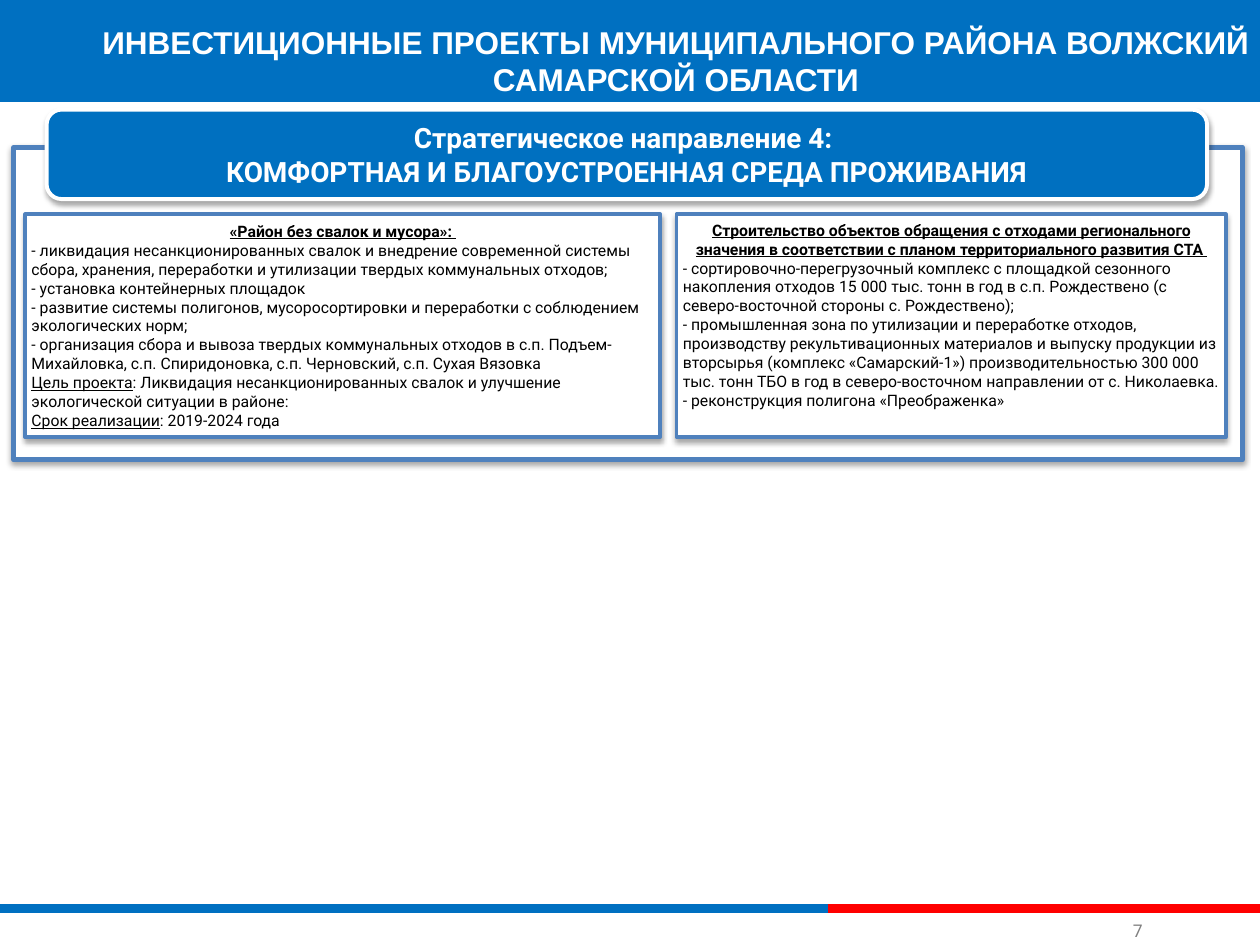
from dataclasses import dataclass

from lxml import etree
from pptx import Presentation
from pptx.dml.color import RGBColor
from pptx.enum.shapes import MSO_CONNECTOR, MSO_SHAPE
from pptx.enum.text import MSO_ANCHOR, MSO_AUTO_SIZE, PP_ALIGN
from pptx.oxml.ns import qn
from pptx.util import Inches, Pt

RECTANGLE, ROUNDED = MSO_SHAPE.RECTANGLE, MSO_SHAPE.ROUNDED_RECTANGLE
STRAIGHT = MSO_CONNECTOR.STRAIGHT
TOP, MIDDLE, BOTTOM = MSO_ANCHOR.TOP, MSO_ANCHOR.MIDDLE, MSO_ANCHOR.BOTTOM
LEFT, CENTER = PP_ALIGN.LEFT, PP_ALIGN.CENTER
FIXED = MSO_AUTO_SIZE.NONE
TITLE_ONLY = 5


@dataclass(frozen=True)
class Theme:
    """Colours, fonts and type sizes of the deck."""
    band: str = "0070C1"
    banner: str = "0070C0"
    border: str = "4F81BD"
    accent: str = "FF0000"
    white: str = "FFFFFF"
    black: str = "000000"
    grey: str = "808080"
    heading_font: str = "Arial"
    body_font: str = "Roboto"
    title_size: float = 18
    banner_size: float = 16
    number_size: float = 10
    body_size: float = 9


THEME = Theme()

TITLE = "ИНВЕСТИЦИОННЫЕ ПРОЕКТЫ МУНИЦИПАЛЬНОГО РАЙОНА ВОЛЖСКИЙ САМАРСКОЙ ОБЛАСТИ"
DIRECTION = ["Стратегическое направление 4: ", "КОМФОРТНАЯ И БЛАГОУСТРОЕННАЯ СРЕДА ПРОЖИВАНИЯ"]
CLEAN_HEADING = "«Район без свалок и мусора»: "
CLEAN_ITEMS = [
    ("", "- ликвидация несанкционированных свалок и внедрение современной системы сбора, хранения, "
         "переработки и утилизации твердых коммунальных отходов;"),
    ("", "- установка контейнерных площадок"),
    ("", "- развитие системы полигонов, мусоросортировки и переработки с соблюдением экологических норм;"),
    ("", "- организация сбора и вывоза твердых коммунальных отходов в с.п. Подъем-Михайловка, "
         "с.п. Спиридоновка, с.п. Черновский, с.п. Сухая Вязовка"),
    ("Цель проекта", ": Ликвидация несанкционированных свалок и улучшение экологической ситуации в районе:"),
    ("Срок реализации", ": 2019-2024 года"),
]
FACILITY_HEADING = ("Строительство объектов обращения с отходами регионального значения "
                    "в соответствии с планом территориального развития СТА ")
FACILITY_ITEMS = [
    ("", "- сортировочно-перегрузочный комплекс с площадкой сезонного накопления отходов "
         "15 000 тыс. тонн в год в с.п. Рождествено (с северо-восточной стороны с. Рождествено);"),
    ("", "- промышленная зона по утилизации и переработке отходов, производству рекультивационных "
         "материалов и выпуску продукции из вторсырья (комплекс «Самарский-1») производительностью "
         "300 000 тыс. тонн ТБО в год в северо-восточном направлении от с. Николаевка."),
    ("", "- реконструкция полигона «Преображенка»"),
]


def inches(box):
    """Turn a box given in inches into lengths."""
    return [Inches(value) for value in box]


def add_panel(page, box, kind, fill, border=None, weight=0):
    """Add a filled shape, with a soft shadow when it has a border."""
    panel = page.shapes.add_shape(kind, *inches(box))
    panel.fill.solid()
    panel.fill.fore_color.rgb = RGBColor.from_string(fill)
    if border is None:
        panel.line.fill.background()
    else:
        panel.line.color.rgb = RGBColor.from_string(border)
        panel.line.width = Pt(weight)
    panel.shadow.inherit = False
    if border is not None:
        effects = panel.element.spPr.find(qn("a:effectLst"))
        shadow = etree.SubElement(effects, qn("a:outerShdw"), blurRad=str(Pt(3)), dist=str(Pt(1.8)),
                                  dir="5400000", rotWithShape="0")
        color = etree.SubElement(shadow, qn("a:srgbClr"), val=THEME.black)
        etree.SubElement(color, qn("a:alpha"), val="35000")
    return panel


def prepare_frame(shape, anchor, wrap=True):
    """Set the margins, anchor and wrapping of a shape's text."""
    frame = shape.text_frame
    frame.auto_size = FIXED
    frame.word_wrap = wrap
    frame.vertical_anchor = anchor
    frame.margin_left = frame.margin_right = Inches(0.05)
    frame.margin_top = frame.margin_bottom = Inches(0.05)
    return frame


def style_frame(frame, align, size, color, font, bold=False):
    """Give every paragraph of a frame one look."""
    for para in frame.paragraphs:
        para.alignment = align
        for span in para.runs:
            style_span(span, size, color, font, bold)


def style_span(span, size, color, font, bold=False, underline=False):
    """Set the type of one run."""
    span.font.name = font
    span.font.size = Pt(size)
    span.font.bold = bold
    span.font.underline = underline
    span.font.color.rgb = RGBColor.from_string(color)


def add_header(page, box):
    """Place the blue band and the title over it."""
    left, top, width, height = box
    add_panel(page, box, RECTANGLE, THEME.band)
    title = page.shapes.title
    title.element.getparent().append(title.element)
    title.left, title.top, title.width, title.height = inches((left + 0.73, top + 0.16, width - 0.73, 0.71))
    frame = prepare_frame(title, TOP)
    frame.text = TITLE
    style_frame(frame, CENTER, THEME.title_size, THEME.white, THEME.heading_font, True)


def add_footer(page, box):
    """Draw the two-colour rule and the page number under it."""
    left, top, width, height = box
    split = left + 6.57
    for start, end, color in ((left, split, THEME.band), (split, left + width, THEME.accent)):
        rule = page.shapes.add_connector(STRAIGHT, *inches((start, top, end, top)))
        rule.line.color.rgb = RGBColor.from_string(color)
        rule.line.width = Pt(5)
        etree.SubElement(rule.element.spPr, qn("a:effectLst"))
    number = page.shapes.add_textbox(*inches((left + 8.94, top + 0.06, 0.19, height - 0.04)))
    frame = prepare_frame(number, BOTTOM, False)
    frame.text = "7"
    style_frame(frame, LEFT, THEME.number_size, THEME.grey, THEME.body_font)


def add_direction(page, box):
    """Place the outer frame with the banner across its top edge."""
    left, top, width, height = box
    add_panel(page, box, RECTANGLE, THEME.white, THEME.border, 3)
    banner = add_panel(page, (left + 0.26, top - 0.3, width - 0.54, 0.71), ROUNDED,
                       THEME.banner, THEME.white, 2.25)
    frame = prepare_frame(banner, MIDDLE)
    frame.text = "\n".join(DIRECTION)
    style_frame(frame, CENTER, THEME.banner_size, THEME.white, THEME.body_font, True)


def add_project(page, box, heading, items, anchor):
    """Place a project card with an underlined heading and its items."""
    card = add_panel(page, box, RECTANGLE, THEME.white, THEME.border, 2)
    frame = prepare_frame(card, anchor)
    look = (THEME.body_size, THEME.black, THEME.body_font)
    frame.text = heading
    style_frame(frame, CENTER, *look, True)
    frame.paragraphs[0].runs[0].font.underline = True
    for label, wording in items:
        para = frame.add_paragraph()
        para.alignment = LEFT
        for text, underline in ((label, True), (wording, False)):
            if text:
                span = para.add_run()
                span.text = text
                style_span(span, *look, underline=underline)


def main():
    """Build the slide and save the deck."""
    deck = Presentation()
    deck.slide_width, deck.slide_height = Inches(10), Inches(7.5)
    page = deck.slides.add_slide(deck.slide_layouts[TITLE_ONLY])
    add_footer(page, (0, 7.21, 10, 0.29))
    add_header(page, (0, -0.03, 10, 0.84))
    add_direction(page, (0.11, 1.17, 9.75, 2.48))
    add_project(page, (5.37, 1.7, 4.36, 1.77), FACILITY_HEADING, FACILITY_ITEMS, TOP)
    add_project(page, (0.2, 1.7, 5.04, 1.77), CLEAN_HEADING, CLEAN_ITEMS, MIDDLE)
    deck.save("out.pptx")


if __name__ == "__main__":
    main()
